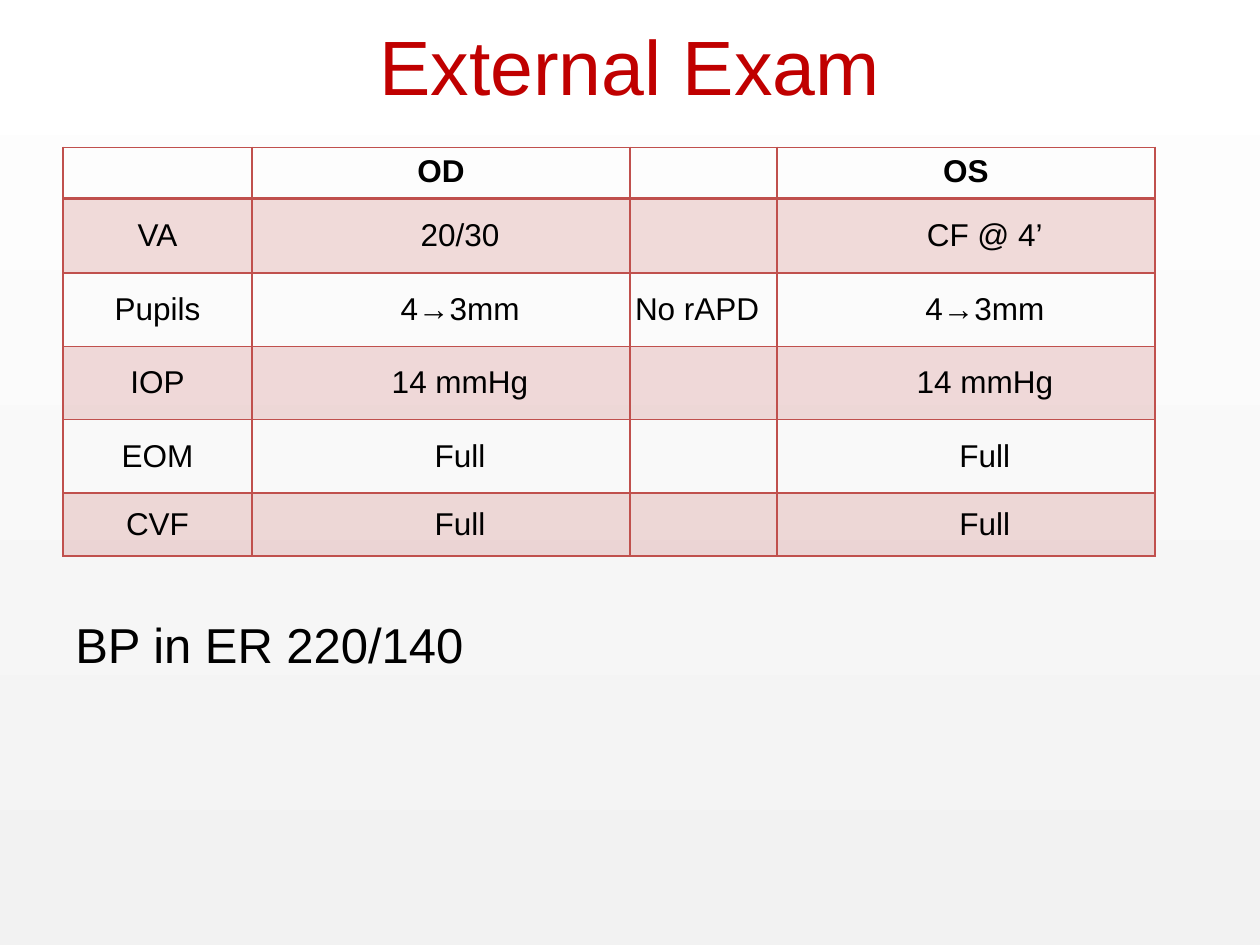
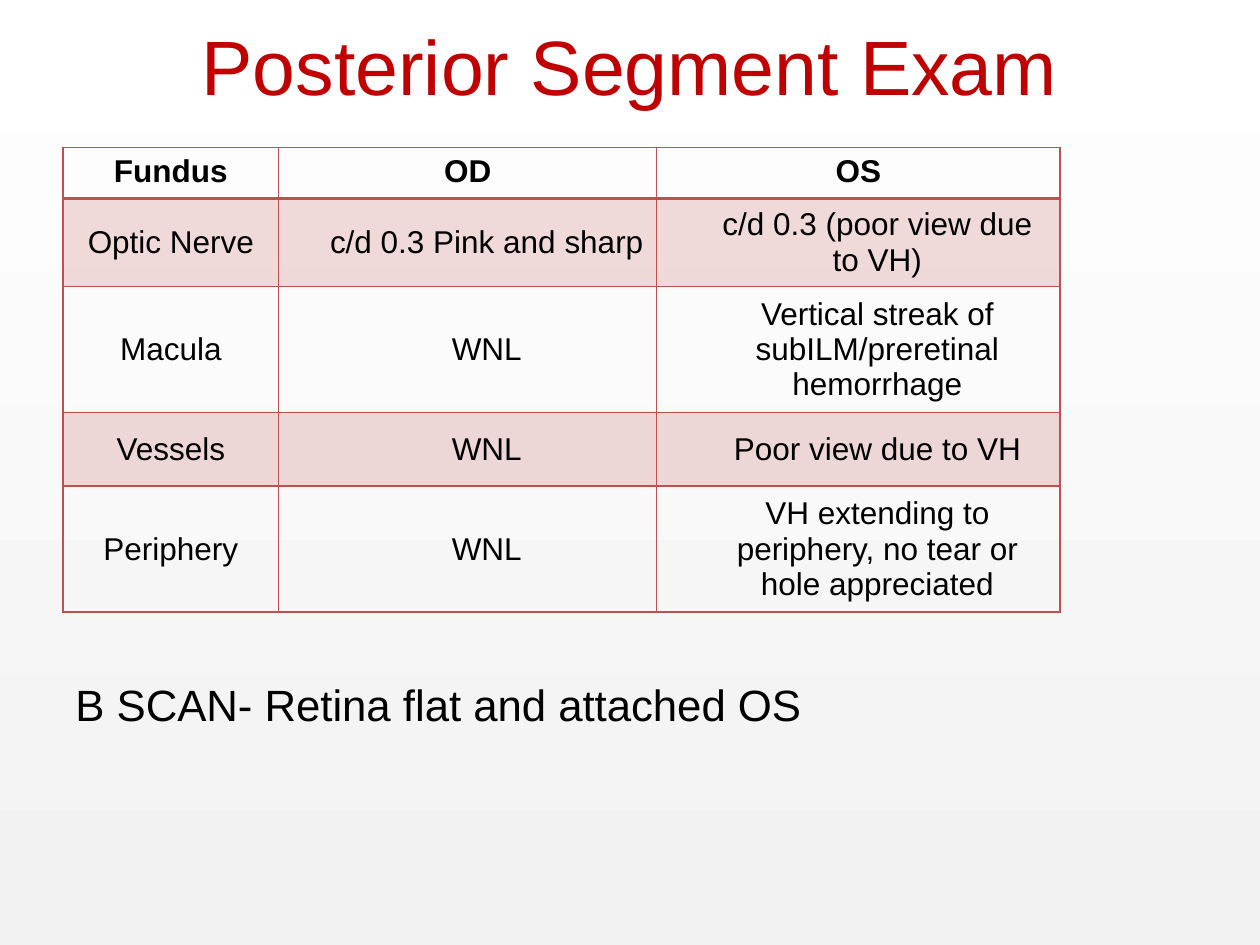
from lxml.etree import SubElement
from pptx import Presentation
from pptx.dml.color import RGBColor
from pptx.enum.shapes import MSO_SHAPE as SHAPE
from pptx.enum.text import MSO_ANCHOR as ANCHOR, PP_ALIGN as ALIGN
from pptx.oxml.ns import qn
from pptx.util import Cm, Pt

FONT = "Arial"
BLACK = "000000"
TITLE_RED = "C00000"
TABLE_RED = "C0504D"
BAND_ALPHA = 20
SLIDE_BOX = (0, 0, 25.4, 19.05)
TITLE_BOX = (1.27, -0.28, 22.86, 3.18)
TABLE_LEFT, TABLE_TOP = 1.27, 2.97
VALUE_INSET = 1.02


def rgb(hex_color):
    return RGBColor.from_string(hex_color)


def cm_box(box):
    return [Cm(v) for v in box]


def add_run(p, text, size, color=BLACK, bold=False):
    r = p.add_run()
    r.text = text
    r.font.name = FONT
    r.font.size = Pt(size)
    r.font.bold = bold
    r.font.color.rgb = rgb(color)


def add_background(s, box):
    sp = s.shapes.add_shape(SHAPE.RECTANGLE, *cm_box(box))
    sp.shadow.inherit = False
    sp.line.fill.background()
    sp.fill.gradient()
    sp.fill.gradient_angle = 90
    for stop, color, position in zip(sp.fill.gradient_stops, ("F2F2F2", "FFFFFF"), (0, 1)):
        stop.color.rgb = rgb(color)
        stop.position = position


def add_text(s, box, text, size, color=BLACK, align=ALIGN.LEFT, anchor=ANCHOR.TOP):
    tf = s.shapes.add_textbox(*cm_box(box)).text_frame
    tf.word_wrap = True
    tf.vertical_anchor = anchor
    p = tf.paragraphs[0]
    p.alignment = align
    add_run(p, text, size, color)


def set_borders(cell, top, bottom):
    tcPr = cell._tc.get_or_add_tcPr()
    for side, width in (("L", 1), ("R", 1), ("T", top), ("B", bottom)):
        ln = SubElement(tcPr, qn(f"a:ln{side}"), w=str(Pt(width)))
        fill = SubElement(ln, qn("a:solidFill"))
        SubElement(fill, qn("a:srgbClr"), val=TABLE_RED)


def set_fill(cell, banded):
    if not banded:
        cell.fill.background()
        return
    cell.fill.solid()
    cell.fill.fore_color.rgb = rgb(TABLE_RED)
    color = cell._tc.tcPr.find(qn("a:solidFill")).find(qn("a:srgbClr"))
    SubElement(color, qn("a:alpha"), val=str(BAND_ALPHA * 1000))


def fill_cell(cell, text, row, inset):
    header = row == 0
    set_borders(cell, 2 if row == 1 else 1, 2 if header else 1)
    set_fill(cell, row % 2 == 1)
    if not header:
        cell.vertical_anchor = ANCHOR.MIDDLE
        if inset is not None:
            cell.margin_left = Cm(inset)
    if text:
        p = cell.text_frame.paragraphs[0]
        p.alignment = ALIGN.CENTER
        add_run(p, text, 18, bold=header)


def add_exam_table(s, left, top, widths, heights, insets, rows):
    box = cm_box((left, top, sum(widths), sum(heights)))
    tbl = s.shapes.add_table(len(rows), len(widths), *box).table
    tbl.first_row = tbl.horz_banding = False
    for column, width in zip(tbl.columns, widths):
        column.width = Cm(width)
    for i, (height, texts) in enumerate(zip(heights, rows)):
        tbl.rows[i].height = Cm(height)
        for j, (text, inset) in enumerate(zip(texts, insets)):
            fill_cell(tbl.cell(i, j), text, i, inset)


def add_exam_slide(prs, title, widths, heights, insets, rows, note, note_box, note_size):
    s = prs.slides.add_slide(prs.slide_layouts[6])
    add_background(s, SLIDE_BOX)
    add_text(s, TITLE_BOX, title, 44, TITLE_RED, ALIGN.CENTER, ANCHOR.MIDDLE)
    add_exam_table(s, TABLE_LEFT, TABLE_TOP, widths, heights, insets, rows)
    add_text(s, note_box, note, note_size)


def main():
    prs = Presentation()
    prs.slide_width, prs.slide_height = cm_box(SLIDE_BOX[2:])

    add_exam_slide(
        prs,
        "External Exam",
        widths=(3.81, 7.62, 2.96, 7.62),
        heights=(1.03, 1.5, 1.48, 1.48, 1.48, 1.27),
        insets=(None, VALUE_INSET, 0, VALUE_INSET),
        rows=(
            ("", "OD", "", "OS"),
            ("VA", "20/30", "", "CF @ 4’"),
            ("Pupils", "4→3mm", "No rAPD", "4→3mm"),
            ("IOP", "14 mmHg", "", "14 mmHg"),
            ("EOM", "Full", "", "Full"),
            ("CVF", "Full", "", "Full"),
        ),
        note="BP in ER 220/140",
        note_box=(1.27, 12.27, 8.71, 2.64),
        note_size=28,
    )
    add_exam_slide(
        prs,
        "Posterior Segment Exam",
        widths=(4.35, 7.62, 8.13),
        heights=(1.03, 1.5, 1.48, 1.48, 1.48),
        insets=(None, VALUE_INSET, VALUE_INSET),
        rows=(
            ("Fundus", "OD", "OS"),
            ("Optic Nerve", "c/d 0.3 Pink and sharp", "c/d 0.3 (poor view due to VH)"),
            ("Macula", "WNL", "Vertical streak of subILM/preretinal hemorrhage"),
            ("Vessels", "WNL", "Poor view due to VH"),
            ("Periphery", "WNL", "VH extending to periphery, no tear or hole appreciated"),
        ),
        note="B SCAN- Retina flat and attached OS",
        note_box=(1.27, 13.54, 15.32, 1.32),
        note_size=25,
    )
    prs.save("out.pptx")


if __name__ == "__main__":
    main()
